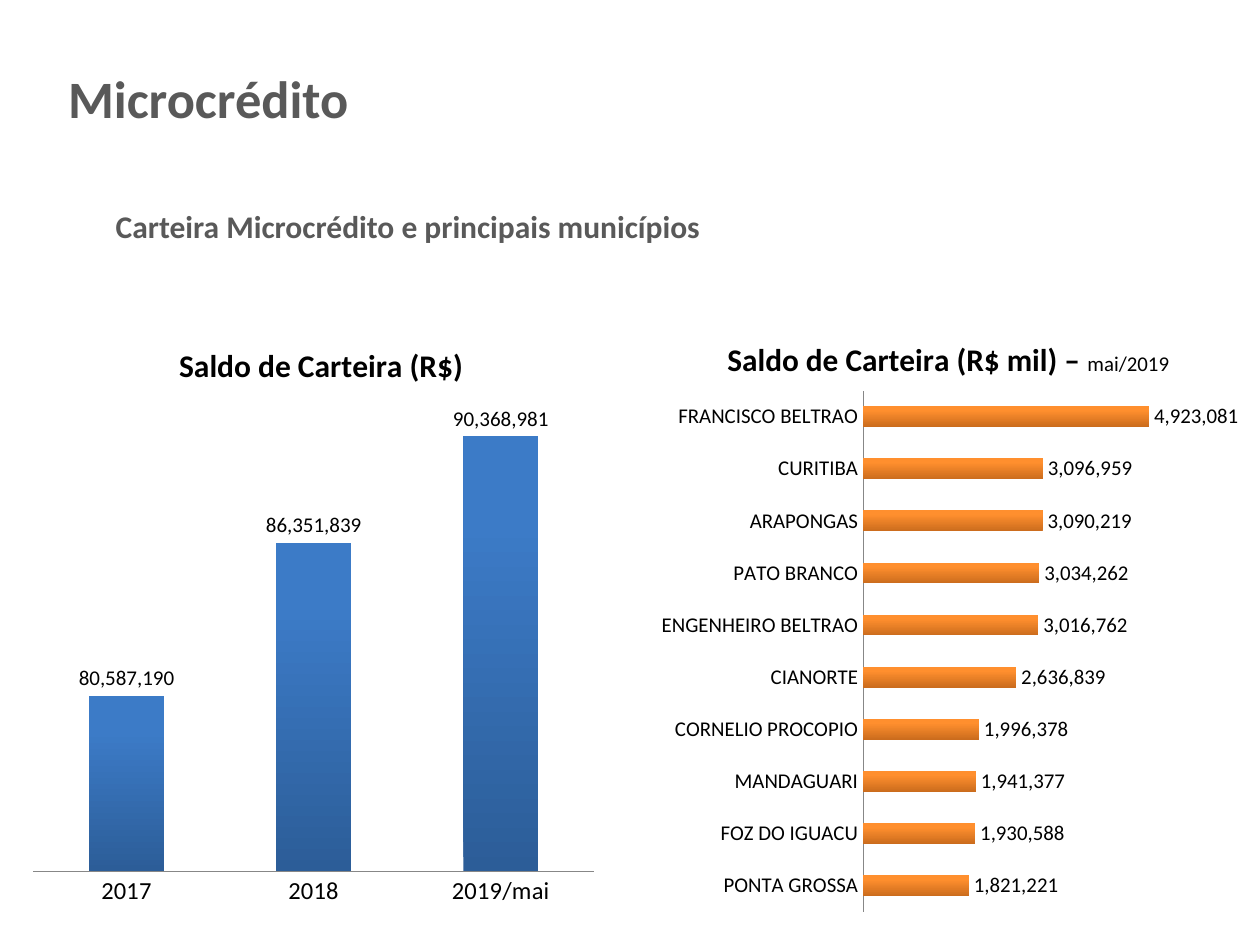
import pptx
import pptx.chart.data
import pptx.dml.color
import pptx.enum.chart
import pptx.enum.text
import pptx.oxml
import pptx.oxml.ns
import pptx.util

GREY = pptx.dml.color.RGBColor(0x59, 0x59, 0x59)
BLACK = pptx.dml.color.RGBColor(0x00, 0x00, 0x00)
AXIS = pptx.dml.color.RGBColor(0x87, 0x87, 0x87)
BLUES = (pptx.dml.color.RGBColor(0x2C, 0x5D, 0x98), pptx.dml.color.RGBColor(0x3C, 0x7B, 0xC7))
ORANGES = (pptx.dml.color.RGBColor(0xCB, 0x6C, 0x1D), pptx.dml.color.RGBColor(0xFF, 0x8F, 0x2E))
FONT = "Calibri"


def add_run(p, text, size=18, color=BLACK, bold=False):
    r = p.add_run()
    r.text = text
    r.font.name, r.font.size, r.font.bold = FONT, pptx.util.Pt(size), bold
    r.font.color.rgb = color


def set_layout(parent, index, **shares):
    """Place a chart part by shares (x, y, w, h) of the chart's size."""
    for old in parent.findall(pptx.oxml.ns.qn("c:layout")):
        parent.remove(old)
    modes = '<c:layoutTarget val="inner"/>' if "w" in shares else ""
    modes += '<c:xMode val="edge"/><c:yMode val="edge"/>'
    values = "".join(f'<c:{k} val="{v}"/>' for k, v in shares.items())
    parent.insert(index, pptx.oxml.parse_xml(
        f'<c:layout {pptx.oxml.ns.nsdecls("c")}><c:manualLayout>'
        f'{modes}{values}</c:manualLayout></c:layout>'))


class Deck:
    def __init__(self):
        self.prs = pptx.Presentation()
        self.prs.slide_width = pptx.util.Inches(10)
        self.prs.slide_height = pptx.util.Inches(7.5)
        self.s = self.prs.slides.add_slide(self.prs.slide_layouts[5])

    def box(self, left, top, width, height):
        """Turn shares of the slide into lengths."""
        w, h = self.prs.slide_width, self.prs.slide_height
        return int(left * w), int(top * h), int(width * w), int(height * h)

    def title(self, text, box):
        sp = self.s.shapes.title
        sp.left, sp.top, sp.width, sp.height = self.box(*box)
        sp.text_frame.vertical_anchor = pptx.enum.text.MSO_ANCHOR.MIDDLE
        p = sp.text_frame.paragraphs[0]
        p.alignment = pptx.enum.text.PP_ALIGN.LEFT
        p.line_spacing = 0.8
        add_run(p, text, size=30, color=GREY, bold=True)

    def subtitle(self, text, box):
        tf = self.s.shapes.add_textbox(*self.box(*box)).text_frame
        tf.word_wrap = True
        add_run(tf.paragraphs[0], text, color=GREY, bold=True)

    def chart(self, kind, rows, box, title, title_at, plot, limits, colors,
              axis_size, overlap=0, reverse=False):
        data = pptx.chart.data.CategoryChartData(number_format="#,##0")
        data.categories = [name for name, _ in rows]
        data.add_series("Series 1", [value for _, value in rows])
        chart = self.s.shapes.add_chart(kind, *self.box(*box), data).chart
        chart.has_legend = False
        chart.font.name, chart.font.size = FONT, pptx.util.Pt(18)
        chart.font.color.rgb = BLACK

        # Title and plot position
        chart.has_title = True
        p = chart.chart_title.text_frame.paragraphs[0]
        for text, fmt in title:
            add_run(p, text, **fmt)
        set_layout(chart.chart_title._element, 1, **title_at)
        set_layout(chart._chartSpace.chart.plotArea, 0, **plot)

        # Axes
        cat, val = chart.category_axis, chart.value_axis
        cat.major_tick_mark = pptx.enum.chart.XL_TICK_MARK.NONE
        cat.tick_labels.font.size = pptx.util.Pt(axis_size)
        cat.format.line.color.rgb = AXIS
        cat.format.line.width = pptx.util.Pt(0.75)
        cat.reverse_order = reverse
        val.minimum_scale, val.maximum_scale = limits
        val.has_major_gridlines = False
        val.visible = False

        # Bars and labels
        bars = chart.plots[0]
        bars.gap_width, bars.overlap, bars.vary_by_categories = 150, overlap, False
        fill = bars.series[0].format.fill
        fill.gradient()
        fill.gradient_angle = 90
        for stop, color, position in zip(fill.gradient_stops, colors, (0, 0.8)):
            stop.color.rgb, stop.position = color, position
        bars.has_data_labels = True
        labels = bars.data_labels
        labels.show_value = True
        labels.number_format, labels.number_format_is_linked = "#,##0", False
        labels.position = pptx.enum.chart.XL_LABEL_POSITION.OUTSIDE_END
        labels.font.size = pptx.util.Pt(12)


def main():
    deck = Deck()
    kinds = pptx.enum.chart.XL_CHART_TYPE

    # Headings
    deck.title("Microcrédito", (0.044, 0.043, 0.451, 0.132))
    deck.subtitle("Carteira Microcrédito e principais municípios",
                  (0.082, 0.212, 0.536, 0.055))

    # Balance by year
    years = [("2017", 80587190), ("2018", 86351839), ("2019/mai", 90368981)]
    deck.chart(kinds.COLUMN_CLUSTERED, years, (0.017, 0.325, 0.464, 0.649),
               title=[("Saldo de Carteira (R$)", {"bold": True})],
               title_at={"x": 0.26, "y": 0.05},
               plot={"x": 0.02, "y": 0.14, "w": 0.96, "h": 0.78},
               limits=(74000000, 92000000), colors=BLUES, axis_size=14, overlap=-25)

    # Balance by city
    cities = [
        ("FRANCISCO BELTRAO", 4923081), ("CURITIBA", 3096959),
        ("ARAPONGAS", 3090219), ("PATO BRANCO", 3034262),
        ("ENGENHEIRO BELTRAO", 3016762), ("CIANORTE", 2636839),
        ("CORNELIO PROCOPIO", 1996378), ("MANDAGUARI", 1941377),
        ("FOZ DO IGUACU", 1930588), ("PONTA GROSSA", 1821221),
    ]
    deck.chart(kinds.BAR_CLUSTERED, cities, (0.519, 0.329, 0.464, 0.649),
               title=[("Saldo de Carteira (R$ mil) – ", {"bold": True}),
                      ("mai/2019", {"size": 12})],
               title_at={"x": 0.12, "y": 0.04},
               plot={"x": 0.36, "y": 0.13, "w": 0.6, "h": 0.85},
               limits=(0, 6000000), colors=ORANGES, axis_size=12, reverse=True)

    deck.prs.save("out.pptx")


if __name__ == "__main__":
    main()
